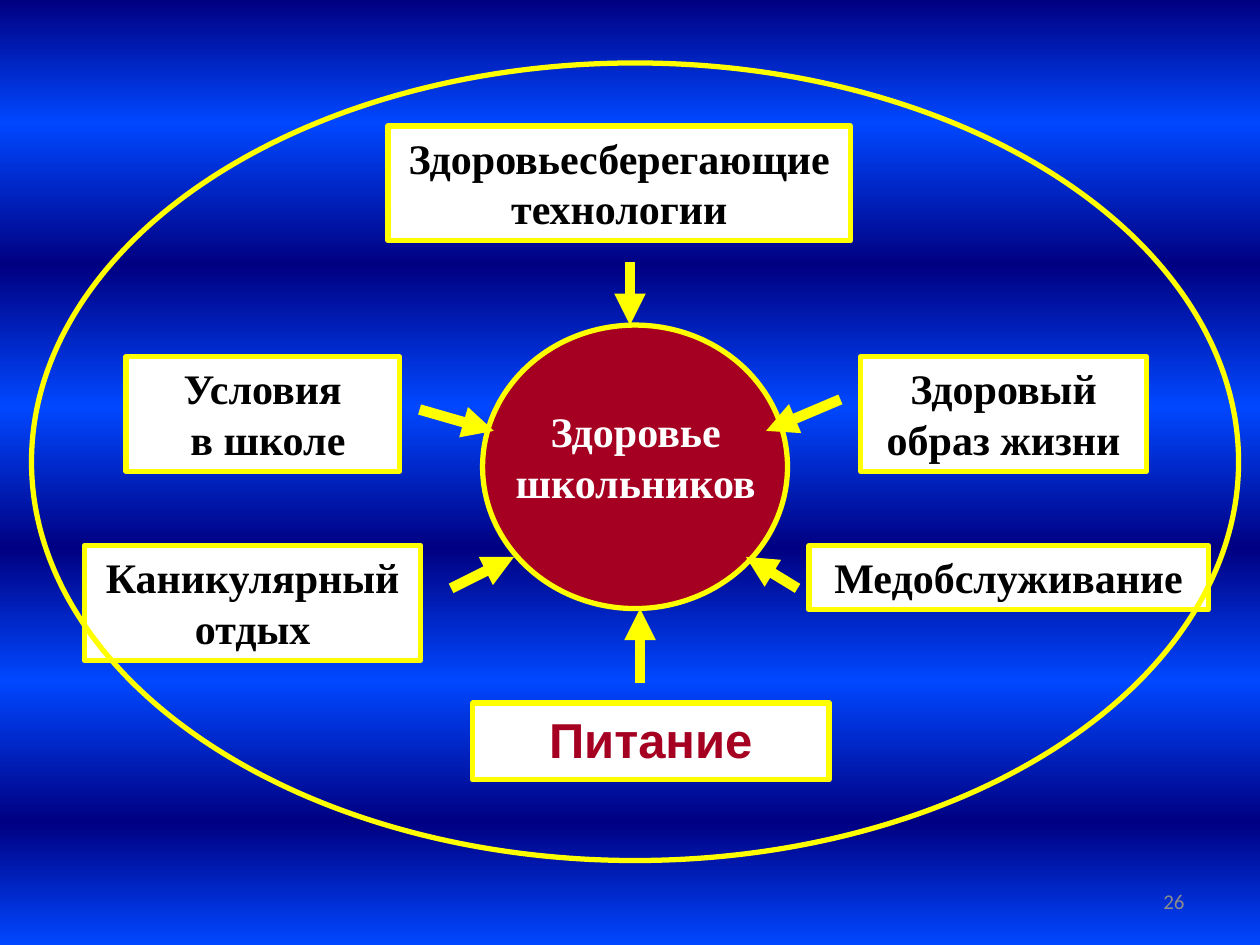
import pptx
import pptx.dml.color
import pptx.enum.dml
import pptx.enum.shapes
import pptx.enum.text
import pptx.oxml.ns
import pptx.util
import lxml.etree
from pptx.util import Inches

COLORS = {
    "navy": "000082", "blue": "0047FF", "yellow": "FFFF00", "crimson": "A50021",
    "white": "FFFFFF", "black": "000000", "gray": "8C8C8C",
}
SERIF = "Times New Roman"
GRADIENT_STOPS = [0, 13, 28, 43, 58, 72, 87, 100]  # navy and blue in turn

CENTER_CIRCLE = (3.83, 2.58, 2.42, 2.25)
OUTER_OVAL = (0.25, 0.5, 9.58, 6.33)
CENTER_TEXT = (["Здоровье", "школьников"], (3.92, 3.17, 2.25, 0.91))
PAGE_NUMBER = ("26", (7.17, 6.95, 2.33, 0.4))

# lines, box, font, size, text colour
FACTORS = [
    (["Условия", " в школе"], (1, 2.83, 2.17, 0.91), SERIF, 24, "black"),
    (["Каникулярный", "отдых"], (0.67, 4.33, 2.67, 0.91), SERIF, 24, "black"),
    (["Питание"], (3.75, 5.58, 2.83, 0.61), "Arial", 28, "crimson"),
    (["Здоровьесберегающие технологии"], (3.08, 1, 3.67, 0.91), SERIF, 24, "black"),
    (["Медобслуживание"], (6.42, 4.33, 3.17, 0.51), SERIF, 24, "black"),
    (["Здоровый образ жизни"], (6.83, 2.83, 2.27, 0.91), SERIF, 24, "black"),
]
# start, end
ARROWS = [
    ((5, 2.08), (5, 2.58)),
    ((3.33, 3.25), (3.92, 3.42)),
    ((6.67, 3.17), (6.08, 3.42)),
    ((3.58, 4.67), (4.08, 4.42)),
    ((6.33, 4.67), (5.92, 4.42)),
    ((5.08, 5.42), (5.08, 4.83)),
]


def rgb(name):
    return pptx.dml.color.RGBColor.from_string(COLORS[name])


def add_element(parent, tag, **attributes):
    return lxml.etree.SubElement(parent, pptx.oxml.ns.qn(tag), attributes)


def paint_background(slide):
    fill = slide.background.fill
    fill.gradient()
    fill.gradient_angle = 270
    stop_list = slide.element.xpath(".//p:bg//a:gsLst")[0]
    for stop in list(stop_list):
        stop_list.remove(stop)
    for index, position in enumerate(GRADIENT_STOPS):
        stop = add_element(stop_list, "a:gs", pos=str(position * 1000))
        color = COLORS["blue" if index % 2 else "navy"]
        add_element(stop, "a:srgbClr", val=color)


def add_outlined(slide, kind, box, fill=None):
    shape = slide.shapes.add_shape(kind, *map(Inches, box))
    shape.shadow.inherit = False
    if fill:
        shape.fill.solid()
        shape.fill.fore_color.rgb = rgb(fill)
    else:
        shape.fill.background()
    shape.line.color.rgb = rgb("yellow")
    shape.line.width = pptx.util.Pt(3)
    return shape


def write_lines(shape, lines, font, size, color, bold=True,
                alignment=pptx.enum.text.PP_ALIGN.CENTER,
                anchor=pptx.enum.text.MSO_ANCHOR.TOP):
    frame = shape.text_frame
    frame.word_wrap = True
    frame.vertical_anchor = anchor
    for index, line in enumerate(lines):
        paragraph = frame.add_paragraph() if index else frame.paragraphs[0]
        paragraph.alignment = alignment
        run = paragraph.add_run()
        run.text = line
        run.font.name = font
        run.font.size = pptx.util.Pt(size)
        run.font.bold = bold
        run.font.color.rgb = rgb(color)


def add_arrow(slide, start, end):
    arrow = slide.shapes.add_connector(
        pptx.enum.shapes.MSO_CONNECTOR.STRAIGHT, *map(Inches, start + end))
    arrow.line.color.rgb = rgb("yellow")
    arrow.line.width = pptx.util.Pt(6)
    properties = arrow.element.spPr
    add_element(properties.find(pptx.oxml.ns.qn("a:ln")), "a:tailEnd", type="triangle")
    add_element(properties, "a:effectLst")


def main():
    presentation = pptx.Presentation()
    presentation.slide_width = Inches(10)
    presentation.slide_height = Inches(7.5)
    slide = presentation.slides.add_slide(presentation.slide_layouts[6])
    paint_background(slide)
    shape_kinds = pptx.enum.shapes.MSO_SHAPE

    number, number_box = PAGE_NUMBER
    write_lines(slide.shapes.add_textbox(*map(Inches, number_box)), [number],
                "Calibri", 12, "gray", bold=False,
                alignment=pptx.enum.text.PP_ALIGN.RIGHT,
                anchor=pptx.enum.text.MSO_ANCHOR.MIDDLE)

    add_outlined(slide, shape_kinds.OVAL, CENTER_CIRCLE, "crimson")
    center_lines, center_box = CENTER_TEXT
    write_lines(slide.shapes.add_textbox(*map(Inches, center_box)),
                center_lines, SERIF, 24, "white")

    for lines, box, font, size, color in FACTORS:
        factor = add_outlined(slide, shape_kinds.RECTANGLE, box, "white")
        write_lines(factor, lines, font, size, color)

    add_outlined(slide, shape_kinds.OVAL, OUTER_OVAL)
    for start, end in ARROWS:
        add_arrow(slide, start, end)

    presentation.save("out.pptx")


if __name__ == "__main__":
    main()
